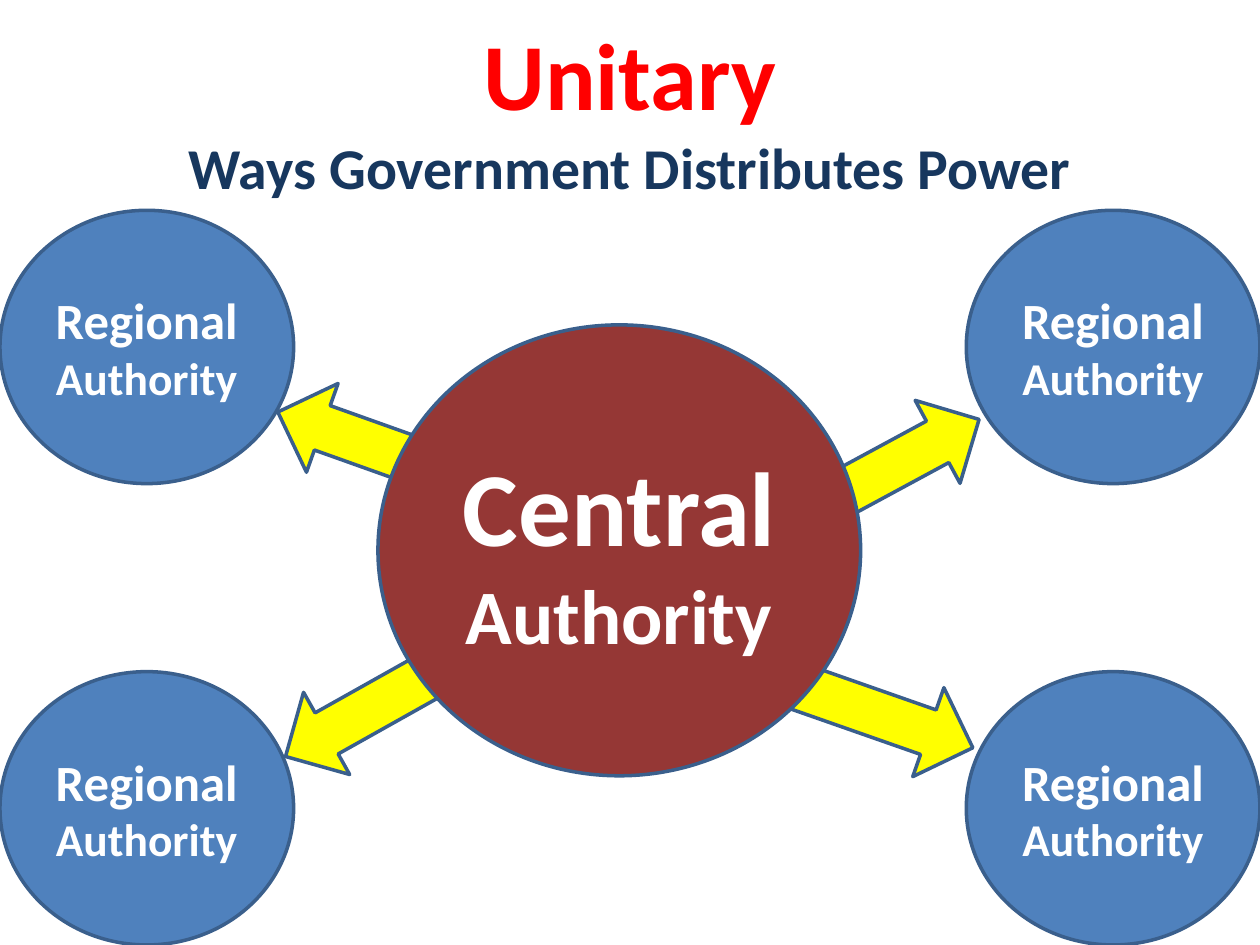
from itertools import product

from pptx import Presentation
from pptx import util as u
from pptx.dml.color import RGBColor
from pptx.enum import shapes, text

WIDTH, HEIGHT = 25.4, 19.05
OUTLINE = "3A5F8C"
ARROW_FILL = "FFFF00"
HEADINGS = [
    {"line": ("Unitary", 54), "hue": "FF0000", "top": 0.2, "height": 2.21, "before": 3},
    {"line": ("Ways Government Distributes Power", 33), "hue": "17375E",
     "top": 2.54, "height": 3.18, "before": 0},
]
CENTRAL = [("Central ", 60), ("Authority", 44)]
CENTRAL_BOX = (7.62, 6.55, 9.73, 9.09)
REGIONAL = [("Regional ", 29), ("Authority", 26)]
REGION_W, REGION_H, REGION_TOP = 5.92, 5.51, 4.24
ARROW_H = 1.9
ARROWS = [
    (5.49, 8.0, 3.84, 199.6),
    (5.51, 13.36, 3.84, 150.7),
    (15.88, 13.49, 3.84, 19.3),
    (16.56, 8.31, 3.38, 331.6),
]


def color(value):
    return RGBColor.from_string(value)


def write(paragraph, parts, hue):
    paragraph.alignment = text.PP_ALIGN.CENTER
    for words, size in parts:
        run = paragraph.add_run()
        run.text = words
        style = {"name": "Calibri", "size": u.Pt(size), "bold": True}
        for key, value in style.items():
            setattr(run.font, key, value)
        run.font.color.rgb = color(hue)


def draw(slide, preset, box, fill):
    figure = slide.shapes.add_shape(preset, *map(u.Cm, box))
    figure.shadow.inherit = False
    figure.fill.solid()
    figure.fill.fore_color.rgb = color(fill)
    figure.line.color.rgb = color(OUTLINE)
    figure.line.width = u.Pt(2)
    return figure


def add_authority(slide, box, fill, parts):
    frame = draw(slide, shapes.MSO_SHAPE.OVAL, box, fill).text_frame
    frame.word_wrap = True
    frame.vertical_anchor = text.MSO_ANCHOR.MIDDLE
    write(frame.paragraphs[0], parts, "FFFFFF")


def add_heading(slide, heading):
    box = (0, heading["top"], WIDTH, heading["height"])
    frame = slide.shapes.add_textbox(*map(u.Cm, box)).text_frame
    frame.word_wrap = True
    paragraph = frame.paragraphs[0]
    paragraph.space_before = u.Pt(heading["before"])
    write(paragraph, [heading["line"]], heading["hue"])


def main():
    deck = Presentation()
    deck.slide_width, deck.slide_height = u.Cm(WIDTH), u.Cm(HEIGHT)
    slide = deck.slides.add_slide(deck.slide_layouts[6])

    for left, top, length, angle in ARROWS:
        arrow = draw(slide, shapes.MSO_SHAPE.RIGHT_ARROW,
                     (left, top, length, ARROW_H), ARROW_FILL)
        arrow.rotation = angle

    add_authority(slide, CENTRAL_BOX, "953735", CENTRAL)
    for heading in HEADINGS:
        add_heading(slide, heading)
    for left, top in product((WIDTH - REGION_W, 0), (REGION_TOP, HEIGHT - REGION_H)):
        add_authority(slide, (left, top, REGION_W, REGION_H), "4F81BD", REGIONAL)

    deck.save("out.pptx")


if __name__ == "__main__":
    main()
